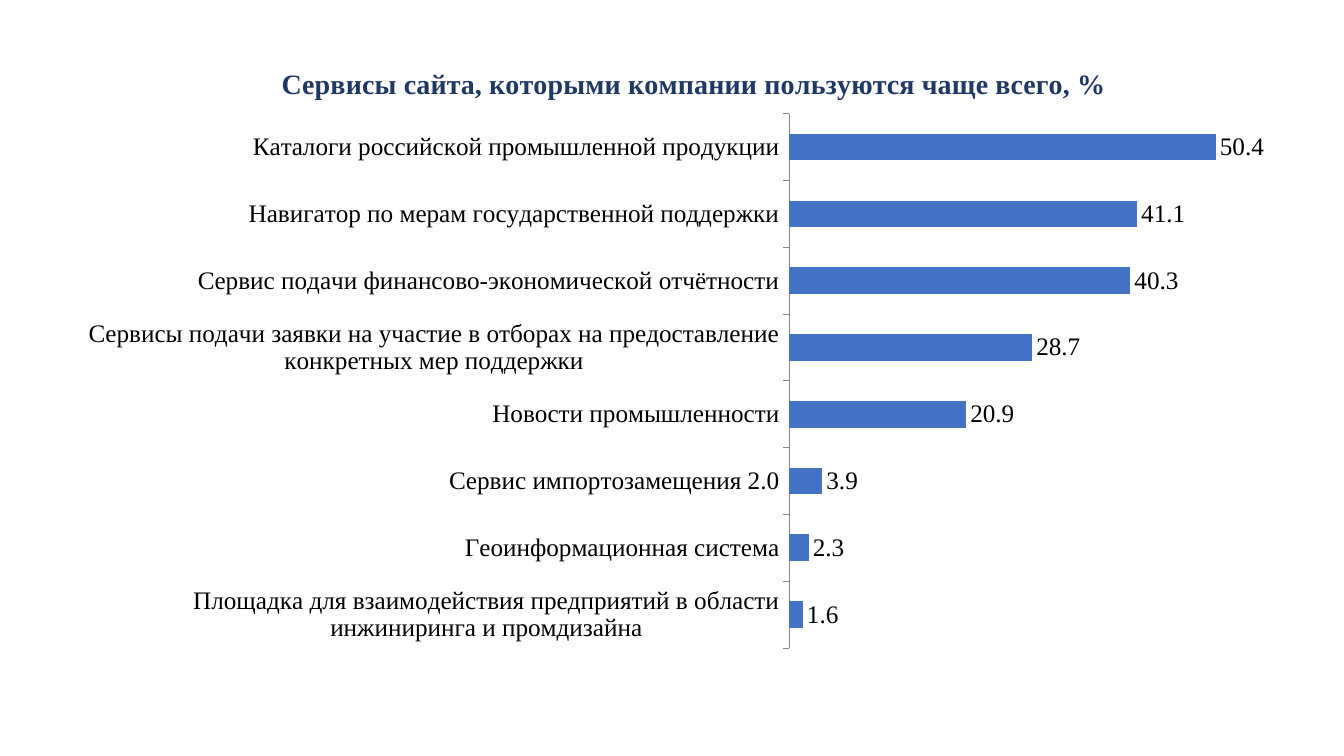
from typing import NamedTuple

from lxml import etree
from pptx import Presentation
from pptx.chart.chart import Chart
from pptx.chart.data import CategoryChartData
from pptx.dml.color import RGBColor
from pptx.enum.chart import XL_CHART_TYPE, XL_LABEL_POSITION, XL_TICK_MARK
from pptx.oxml import parse_xml
from pptx.oxml.ns import nsdecls
from pptx.util import Pt

BAR_CLUSTERED = XL_CHART_TYPE.BAR_CLUSTERED
OUTSIDE_END = XL_LABEL_POSITION.OUTSIDE_END
TICK_OUTSIDE = XL_TICK_MARK.OUTSIDE

FONT = "Times New Roman"
HEADING = "Сервисы сайта, которыми компании пользуются чаще всего, %"


class Service(NamedTuple):
    name: str
    share: float


SERVICES = [
    Service("Каталоги российской промышленной продукции", 50.4),
    Service("Навигатор по мерам государственной поддержки", 41.1),
    Service("Сервис подачи финансово-экономической отчётности", 40.3),
    Service("Сервисы подачи заявки на участие в отборах на предоставление "
            "конкретных мер поддержки", 28.7),
    Service("Новости промышленности", 20.9),
    Service("Сервис импортозамещения 2.0", 3.9),
    Service("Геоинформационная система", 2.3),
    Service("Площадка для взаимодействия предприятий в области "
            "инжиниринга и промдизайна", 1.6),
]


def color(value: str) -> RGBColor:
    return RGBColor.from_string(value)


def manual_layout(settings: dict[str, str]) -> etree._Element:
    entries = "".join(f'<c:{key} val="{val}"/>' for key, val in settings.items())
    return parse_xml(
        f'<c:layout {nsdecls("c")}><c:manualLayout>{entries}'
        "</c:manualLayout></c:layout>"
    )


def set_heading(chart: Chart) -> None:
    heading = chart.chart_title
    heading.text_frame.text = HEADING
    font = heading.text_frame.paragraphs[0].font
    font.name = FONT
    font.size = Pt(20)
    font.bold = True
    font.color.rgb = color("203864")
    heading.include_in_layout = False
    title = chart.element.chart.find("{*}title")
    for layout in title.findall("{*}layout"):
        title.remove(layout)
    title.find("{*}tx").addnext(manual_layout(
        {"xMode": "edge", "yMode": "edge", "x": "0.17", "y": "0.04"}))


def place_plot(chart: Chart) -> None:
    plot_area = chart.element.chart.plotArea
    for layout in plot_area.findall("{*}layout"):
        plot_area.remove(layout)
    plot_area.insert(0, manual_layout({
        "layoutTarget": "inner", "xMode": "edge", "yMode": "edge",
        "x": "0.577", "y": "0.124", "w": "0.403", "h": "0.855"}))


def style_axes(chart: Chart) -> None:
    names = chart.category_axis
    names.reverse_order = True
    names.major_tick_mark = TICK_OUTSIDE
    names.has_major_gridlines = False
    names.format.line.color.rgb = color("878787")
    names.format.line.width = Pt(0.75)
    shares = chart.value_axis
    shares.minimum_scale = 0
    shares.maximum_scale = 60
    shares.has_major_gridlines = False
    shares.visible = False


def style_bars(chart: Chart) -> None:
    plot = chart.plots[0]
    plot.gap_width = 150
    plot.vary_by_categories = False
    bars = plot.series[0]
    bars.format.fill.solid()
    bars.format.fill.fore_color.rgb = color("4472C4")
    labels = bars.data_labels
    labels.show_value = True
    labels.position = OUTSIDE_END
    labels.number_format = "General"
    labels.number_format_is_linked = False


def main() -> None:
    deck = Presentation()
    deck.slide_width, deck.slide_height = Pt(960), Pt(540)
    slide = deck.slides.add_slide(deck.slide_layouts[6])

    usage = CategoryChartData()
    usage.categories = [service.name for service in SERVICES]
    usage.add_series(HEADING, [service.share for service in SERVICES])
    chart = slide.shapes.add_chart(
        BAR_CLUSTERED, Pt(44.64), Pt(25.92), Pt(900), Pt(446.4), usage).chart
    chart.has_legend = False
    chart.font.name = FONT
    chart.font.size = Pt(18)
    chart.font.color.rgb = color("000000")
    set_heading(chart)
    place_plot(chart)
    style_axes(chart)
    style_bars(chart)
    deck.save("out.pptx")


if __name__ == "__main__":
    main()
